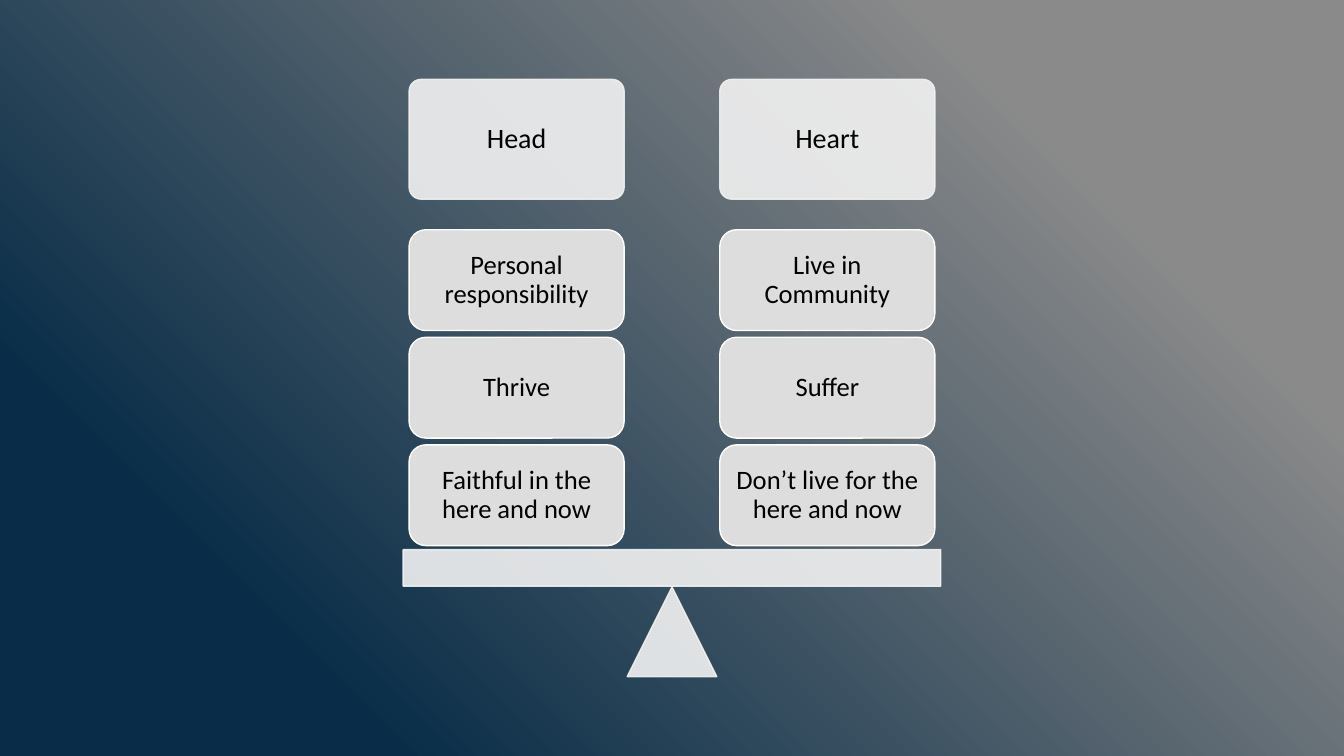
from pptx import Presentation
from pptx.dml.color import RGBColor
from pptx.enum.shapes import MSO_SHAPE
from pptx.enum.text import MSO_ANCHOR, PP_ALIGN
from pptx.oxml.ns import qn
from pptx.util import Cm, Pt
from lxml.etree import SubElement

SCALE_SIDES = [
    ("Head", ["Personal responsibility", "Thrive", "Faithful in the here and now"]),
    ("Heart", ["Live in Community", "Suffer", "Don’t live for the here and now"]),
]


def colour(hex_value):
    """Turn a hex string into a colour."""
    return RGBColor.from_string(hex_value)


def paint_background(slide):
    """Fill the slide with a diagonal grey to navy gradient."""
    fill = slide.background.fill
    fill.gradient()
    fill.gradient_angle = 225
    for stop, position, shade in zip(fill.gradient_stops, (0.2, 0.81), ("8A8A8A", "092D48")):
        stop.position = position
        stop.color.rgb = colour(shade)


def add_block(slide, kind, left, top, width, height, fill, line, opacity=100):
    """Add a flat shape, with sizes in centimetres and opacity in percent."""
    block = slide.shapes.add_shape(kind, Cm(left), Cm(top), Cm(width), Cm(height))
    block.shadow.inherit = False
    block.fill.solid()
    block.fill.fore_color.rgb = colour(fill)
    block.line.color.rgb = colour(line)
    block.line.width = Pt(1)
    if opacity < 100:
        for tint in block._element.spPr.iter(qn("a:srgbClr")):
            SubElement(tint, qn("a:alpha")).set("val", str(opacity * 1000))
    return block


def add_label(block, text, size):
    """Write centred black text in a block."""
    frame = block.text_frame
    frame.word_wrap = True
    frame.vertical_anchor = MSO_ANCHOR.MIDDLE
    frame.margin_left = frame.margin_right = Cm(0.2)
    frame.margin_top = frame.margin_bottom = Cm(0.2)
    paragraph = frame.paragraphs[0]
    paragraph.text = text
    paragraph.alignment = PP_ALIGN.CENTER
    paragraph.line_spacing = 0.9
    paragraph.font.name = "Calibri"
    paragraph.font.size = Pt(size)
    paragraph.font.color.rgb = colour("000000")


def add_side(slide, left, top, width, heading, weights):
    """Place a heading and its stack of weights on one side of the scale."""
    header = add_block(slide, MSO_SHAPE.ROUNDED_RECTANGLE, left, top, width, 3.02,
                       "F2F2F2", "F2F2F2", 90)
    header.adjustments[0] = 0.1
    add_label(header, heading, 20)
    for row, weight in enumerate(weights):
        tile = add_block(slide, MSO_SHAPE.ROUNDED_RECTANGLE, left, top + 3.79 + row * 2.71,
                         width, 2.54, "DDDDDD", "FFFFFF")
        add_label(tile, weight, 19)


def add_scale(slide, left, top, width, height):
    """Draw the balance: fulcrum, beam and both loaded sides."""
    fulcrum, beam, side, inset = 2.26, 0.92, 5.42, 0.15
    fulcrum_top = top + height - fulcrum
    add_block(slide, MSO_SHAPE.ISOSCELES_TRIANGLE, left + (width - fulcrum) / 2, fulcrum_top,
              fulcrum, fulcrum, "F2F2F2", "F2F2F2", 90)
    add_block(slide, MSO_SHAPE.RECTANGLE, left, fulcrum_top - beam - 0.02, width, beam,
              "F2F2F2", "F2F2F2", 90)
    side_lefts = (left + inset, left + width - inset - side)
    for side_left, (heading, weights) in zip(side_lefts, SCALE_SIDES):
        add_side(slide, side_left, top, side, heading, weights)


def main():
    """Build and save the slide."""
    presentation = Presentation()
    presentation.slide_width, presentation.slide_height = Cm(33.87), Cm(19.05)
    slide = presentation.slides.add_slide(presentation.slide_layouts[6])
    paint_background(slide)
    add_scale(slide, 10.16, 2, 13.55, 15.05)
    presentation.save("out.pptx")


if __name__ == "__main__":
    main()
